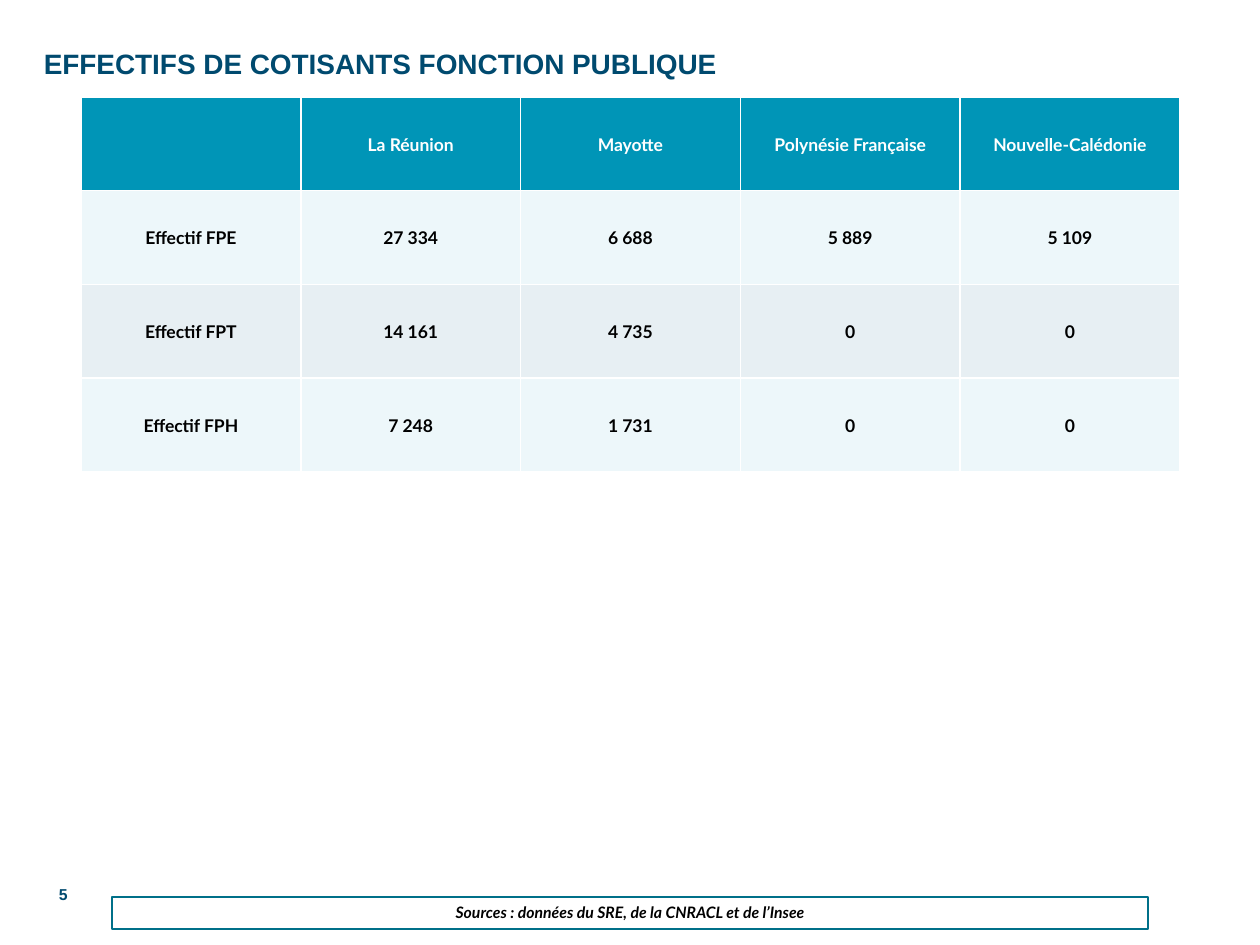
from lxml import etree
from pptx import Presentation
from pptx.dml.color import RGBColor
from pptx.enum.shapes import MSO_SHAPE
from pptx.enum.text import MSO_ANCHOR, PP_ALIGN
from pptx.oxml.ns import qn
from pptx.util import Pt

PX = 914400 // 126  # EMU in one px
CENTER, RIGHT = PP_ALIGN.CENTER, PP_ALIGN.RIGHT
MIDDLE, TOP = MSO_ANCHOR.MIDDLE, MSO_ANCHOR.TOP
RECTANGLE = MSO_SHAPE.RECTANGLE

NAVY = RGBColor(0x00, 0x4A, 0x6F)
TEAL = RGBColor(0x00, 0x70, 0x89)
HEADER = RGBColor(0x00, 0x95, 0xB7)
BANDS = [RGBColor(0xED, 0xF7, 0xFA), RGBColor(0xE7, 0xEF, 0xF3)]
WHITE = RGBColor(0xFF, 0xFF, 0xFF)
BLACK = RGBColor(0x00, 0x00, 0x00)

ROWS = [
    ["", "La Réunion", "Mayotte", "Polynésie Française", "Nouvelle-Calédonie"],
    ["Effectif FPE", "27 334", "6 688", "5 889", "5 109"],
    ["Effectif FPT", "14 161", "4 735", "0", "0"],
    ["Effectif FPH", "7 248", "1 731", "0", "0"],
]


def emu(box):
    return [length * PX for length in box]


def write(frame, text, font, size, color, align=CENTER, italic=False):
    para = frame.paragraphs[0]
    para.text = text
    para.alignment = align
    para.font.name, para.font.size = font, Pt(size)
    para.font.bold, para.font.italic = True, italic
    para.font.color.rgb = color


def add_title(page, box):
    title = page.shapes.title
    title.left, title.top, title.width, title.height = emu(box)
    frame = title.text_frame
    frame.word_wrap = False
    frame.vertical_anchor = MIDDLE
    write(frame, "EFFECTIFS DE COTISANTS FONCTION PUBLIQUE", "Arial", 16, NAVY)


def add_page_number(page, box):
    frame = page.shapes.add_textbox(*emu(box)).text_frame
    frame.word_wrap = True
    frame.vertical_anchor = MIDDLE
    write(frame, "5", "Arial", 9, NAVY, RIGHT)


def add_sources(page, box):
    shape = page.shapes.add_shape(RECTANGLE, *emu(box))
    shape.shadow.inherit = False
    shape.fill.background()
    shape.line.color.rgb = TEAL
    shape.line.width = Pt(0.75)
    shape.text_frame.word_wrap = True
    shape.text_frame.vertical_anchor = TOP
    write(shape.text_frame, "Sources : données du SRE, de la CNRACL et de l’Insee",
          "Lato", 9, BLACK, italic=True)


def add_borders(cell, top_width):
    """Draw white cell borders; they must come before the fill in tcPr."""
    properties = cell._tc.get_or_add_tcPr()
    widths = {"a:lnL": 1, "a:lnR": 1, "a:lnT": top_width, "a:lnB": 1}
    for index, (side, width) in enumerate(widths.items()):
        line = etree.Element(qn(side), w=str(Pt(width)))
        fill = etree.SubElement(line, qn("a:solidFill"))
        etree.SubElement(fill, qn("a:srgbClr"), val=str(WHITE))
        properties.insert(index, line)


def add_headcount_table(page, box):
    left, top, width, height = emu(box)
    table = page.shapes.add_table(len(ROWS), len(ROWS[0]), left, top, width, height).table
    for row_index, values in enumerate(ROWS):
        is_header = row_index == 0
        for column_index, value in enumerate(values):
            cell = table.cell(row_index, column_index)
            cell.fill.solid()
            cell.fill.fore_color.rgb = HEADER if is_header else BANDS[(row_index - 1) % 2]
            cell.vertical_anchor = MIDDLE
            cell.margin_left = cell.margin_right = cell.margin_top = PX
            cell.margin_bottom = 0
            write(cell.text_frame, value, "Lato", 10, WHITE if is_header else BLACK)
            add_borders(cell, 1.5 if is_header else 1)


def main():
    deck = Presentation()
    deck.slide_width, deck.slide_height = 1260 * PX, 945 * PX
    page = deck.slides.add_slide(deck.slide_layouts[5])  # title only
    add_title(page, (11, 37, 739, 53))
    add_page_number(page, (5, 869, 75, 50))
    add_sources(page, (112, 897, 1036, 32))
    add_headcount_table(page, (81, 97, 1099, 375))
    deck.save("out.pptx")


if __name__ == "__main__":
    main()
